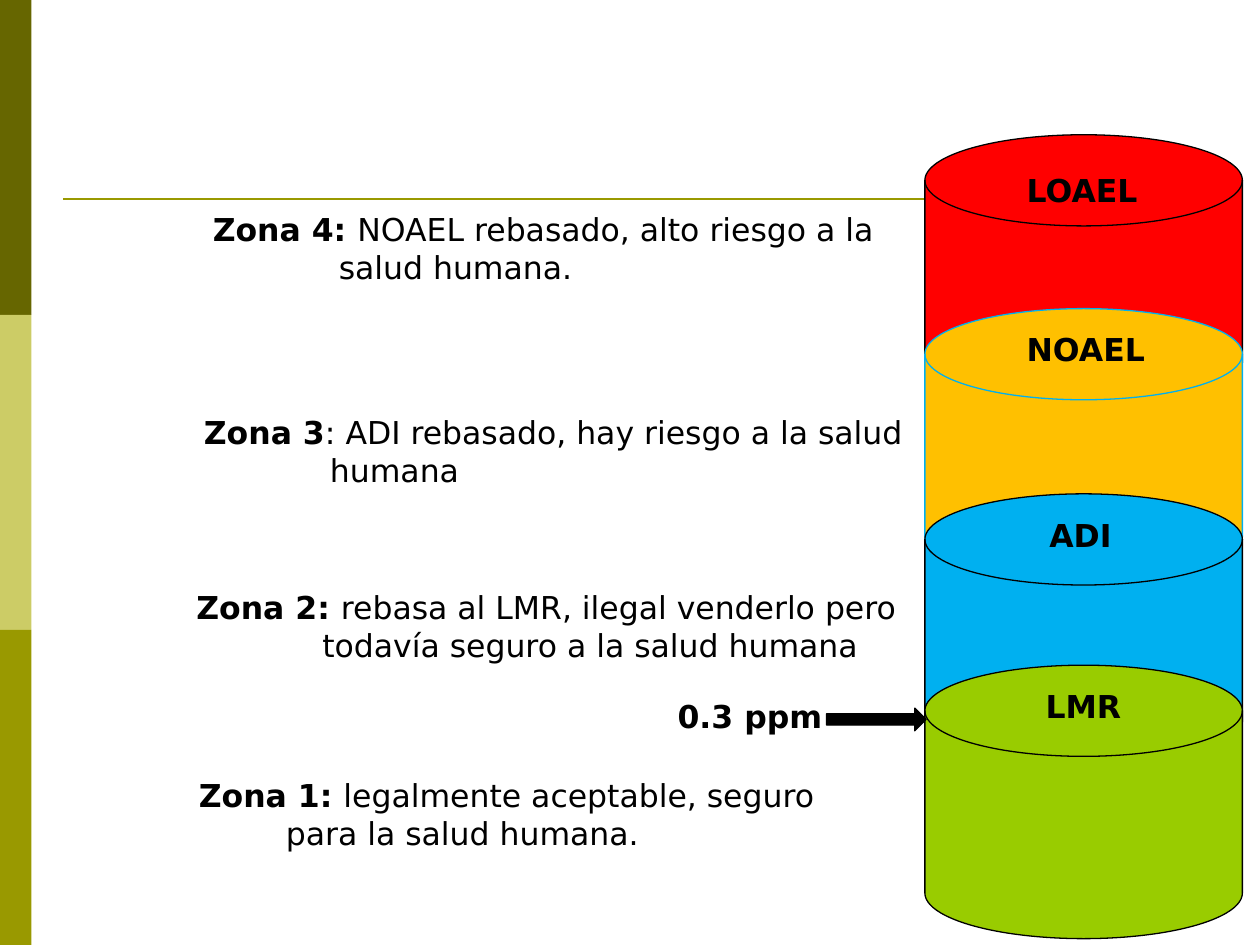
from pptx import Presentation
from pptx.dml.color import RGBColor
from pptx.enum.shapes import MSO_CONNECTOR, MSO_SHAPE
from pptx.enum.text import MSO_AUTO_SIZE
from pptx.oxml.ns import qn
from pptx.util import Inches, Pt
from lxml.etree import SubElement

BANDS = ["666600", "CCCC66", "999900"]
DISKS = [
    (1.07, "FF0000", "000000"),
    (2.45, "FFC000", "00B0F0"),
    (3.92, "00B0F0", "000000"),
    (5.28, "99CC00", "000000"),
]
LABELS = [
    (8.05, 1.31, 1.11, "LOAEL"),
    (8.05, 2.57, 1.16, "NOAEL"),
    (8.23, 4.05, 0.75, "ADI"),
    (8.2, 5.4, 0.8, "LMR"),
    (5.28, 5.48, 1.36, "0.3 ppm"),
]
ZONES = [
    (1.48, 6.11, 5.11, 0.69, "Zona 1: ", "legalmente aceptable, seguro", "para la salud humana."),
    (1.46, 4.62, 5.82, 1, "Zona 2: ", "rebasa al LMR, ilegal venderlo pero", "todavía seguro a la salud humana"),
    (1.52, 3.23, 5.89, 1, "Zona 3", ": ADI rebasado, hay riesgo a la salud", "humana"),
    (1.59, 1.62, 5.52, 1, "Zona 4: ", "NOAEL rebasado, alto riesgo a la", "salud humana."),
]


def color(code):
    """Turn a hex string into a colour."""
    return RGBColor.from_string(code)


def add_form(slide, kind, box, fill, line=None):
    """Add a filled preset shape, outlined if a line colour is given."""
    form = slide.shapes.add_shape(kind, *map(Inches, box))
    form.shadow.inherit = False
    form.fill.solid()
    form.fill.fore_color.rgb = color(fill)
    if line:
        form.line.color.rgb = color(line)
        form.line.width = Pt(0.75)
    else:
        form.line.fill.background()
    return form


def add_rule(slide, left, right, top, code):
    """Add a horizontal rule."""
    rule = slide.shapes.add_connector(
        MSO_CONNECTOR.STRAIGHT, Inches(left), Inches(top), Inches(right), Inches(top))
    rule.line.color.rgb = color(code)
    rule.line.width = Pt(1.5)
    SubElement(rule._element.spPr, qn("a:effectLst"))


def add_frame(slide, left, top, width, height):
    """Add a text box that fits its text and return its frame."""
    box = slide.shapes.add_textbox(*map(Inches, (left, top, width, height)))
    frame = box.text_frame
    frame.word_wrap = False
    frame.auto_size = MSO_AUTO_SIZE.SHAPE_TO_FIT_TEXT
    return frame


def style(para, bold=False):
    """Set the font of a paragraph."""
    font = para.font
    font.name = "DejaVu Sans"
    font.size = Pt(18)
    font.bold = bold
    font.color.rgb = color("000000")


def add_label(slide, left, top, width, text):
    """Add a bold one-line label."""
    para = add_frame(slide, left, top, width, 0.4).paragraphs[0]
    para.text = text
    style(para, True)


def add_zone(slide, left, top, width, indent, name, first, second):
    """Add a zone note with a bold name and an indented second line."""
    frame = add_frame(slide, left, top, width, 0.71)
    head, tail = frame.paragraphs[0], frame.add_paragraph()
    run = head.add_run()
    run.text = name
    run.font.bold = True
    head.add_run().text = first
    tail.text = second
    tail._p.get_or_add_pPr().set("marL", str(Inches(indent)))
    for para in (head, tail):
        style(para)


def main():
    """Build the slide of risk zones and save it."""
    deck = Presentation()
    deck.slide_width, deck.slide_height = Inches(10), Inches(7.5)
    slide = deck.slides.add_slide(deck.slide_layouts[6])
    for row, fill in enumerate(BANDS):
        add_form(slide, MSO_SHAPE.RECTANGLE, (0, 2.5 * row, 0.25, 2.5), fill)
    add_rule(slide, 0.5, 9.33, 1.58, "999900")
    for top, fill, line in DISKS:
        add_form(slide, MSO_SHAPE.FLOWCHART_MAGNETIC_DISK, (7.34, top, 2.52, 2.17), fill, line)
    for label in LABELS:
        add_label(slide, *label)
    add_form(slide, MSO_SHAPE.RIGHT_ARROW, (6.56, 5.62, 0.79, 0.18), "000000", "000000")
    for zone in ZONES:
        add_zone(slide, *zone)
    deck.save("out.pptx")


if __name__ == "__main__":
    main()
